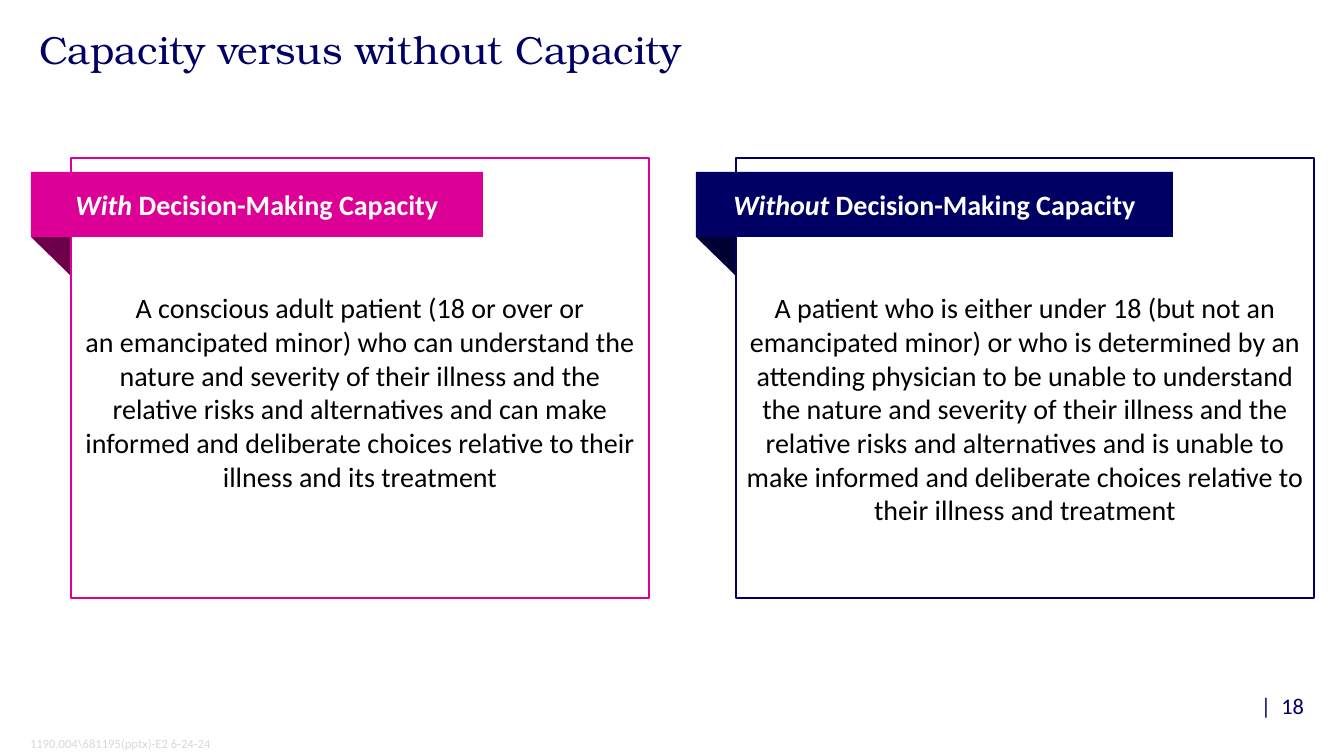
from dataclasses import dataclass

from pptx import Presentation
from pptx.dml.color import RGBColor
from pptx.enum.shapes import MSO_SHAPE
from pptx.enum.text import MSO_ANCHOR, MSO_AUTO_SIZE, PP_ALIGN
from pptx.util import Pt

RECTANGLE = MSO_SHAPE.RECTANGLE
TOP, MIDDLE = MSO_ANCHOR.TOP, MSO_ANCHOR.MIDDLE
LEFT, CENTER = PP_ALIGN.LEFT, PP_ALIGN.CENTER
NO_FIT = MSO_AUTO_SIZE.NONE

# A tilde in the card text stands for a no-break space.
NO_BREAK_SPACE = chr(160)
TITLE = "Capacity versus without Capacity"
PAGE_NUMBER = "|  18"
DOCUMENT_ID = "1190.004\\681195(pptx)-E2 6-24-24"
CARDS = [
    {
        "emphasis": "With",
        "heading": " Decision-Making Capacity",
        "body": "A conscious adult patient (18 or over or an~emancipated minor)~who "
                "can~understand the nature and severity of their~illness and the "
                "relative risks and~alternatives and~can~make informed~and deliberate "
                "choices relative to~their illness and its treatment",
        "color": "DC0096",
        "fold_color": "6E004B",
        "ribbon_width": 452,
    },
    {
        "emphasis": "Without",
        "heading": " Decision-Making Capacity",
        "body": "A patient who is either under 18 (but~not an emancipated minor) or who "
                "is determined by an attending~physician to be unable to understand the "
                "nature and severity of their~illness and the relative risks "
                "and~alternatives and~is~unable to make~informed and deliberate choices "
                "relative to their illness~and~treatment",
        "color": "000064",
        "fold_color": "000032",
        "ribbon_width": 477,
    },
]


@dataclass(frozen=True)
class Theme:
    title_font: str = "TeX Gyre Bonum"
    body_font: str = "Calibri"
    navy: str = "000064"
    white: str = "FFFFFF"
    black: str = "000000"
    gray: str = "D9D9D9"
    title_size: int = 28
    body_size: int = 20
    number_size: int = 16
    footer_size: int = 9


THEME = Theme()
SLIDE_WIDTH, SLIDE_HEIGHT = 1344, 756
EMU_PER_PX = 914400 / 100.8
CARD_LEFT, CARD_TOP, CARD_WIDTH, CARD_HEIGHT = 71, 158, 578, 440
CARD_PITCH = 665
BODY_INSET = 133
RIBBON_TOP, RIBBON_HEIGHT = 172, 65
RIBBON_OVERHANG = 40
FOLD_RISE, FOLD_DROP = 28, 39


def px(length):
    return round(length * EMU_PER_PX)


def place(shape, left, top, width, height):
    shape.left, shape.top = px(left), px(top)
    shape.width, shape.height = px(width), px(height)


def set_frame(shape, anchor, insets=(10, 5, 10, 5)):
    frame = shape.text_frame
    frame.word_wrap = True
    frame.auto_size = NO_FIT
    frame.vertical_anchor = anchor
    (frame.margin_left, frame.margin_top,
     frame.margin_right, frame.margin_bottom) = map(px, insets)
    return frame


def write(paragraph, texts, size, color, font=THEME.body_font, align=LEFT):
    paragraph.alignment = align
    for text in texts:
        run = paragraph.add_run()
        run.text = text
        run.font.name = font
        run.font.size = Pt(size)
        run.font.color.rgb = RGBColor.from_string(color)
    return paragraph.runs


def paint(shape, fill, line=None):
    shape.shadow.inherit = False
    shape.fill.solid()
    shape.fill.fore_color.rgb = RGBColor.from_string(fill)
    if line:
        shape.line.color.rgb = RGBColor.from_string(line)
        shape.line.width = Pt(1)
    else:
        shape.line.fill.background()


def add_rectangle(slide, box, fill, line=None):
    shape = slide.shapes.add_shape(RECTANGLE, *map(px, box))
    paint(shape, fill, line)
    return shape


def add_label(slide, box, text, size, color, anchor, insets):
    label = slide.shapes.add_textbox(*map(px, box))
    frame = set_frame(label, anchor, insets)
    write(frame.paragraphs[0], [text], size, color)


def add_title(slide):
    title = slide.shapes.title
    place(title, 29, 26, 1285, 97)
    paragraph = set_frame(title, TOP).paragraphs[0]
    paragraph.line_spacing = 0.9
    write(paragraph, [TITLE], THEME.title_size, THEME.navy, THEME.title_font)


def add_card(slide, card, left):
    """Draw a bordered card with a ribbon that folds behind its left edge."""
    ribbon_left = left - RIBBON_OVERHANG
    ribbon_bottom = RIBBON_TOP + RIBBON_HEIGHT

    builder = slide.shapes.build_freeform(ribbon_left, ribbon_bottom, EMU_PER_PX)
    builder.add_line_segments([(left, ribbon_bottom + FOLD_DROP),
                               (left, ribbon_bottom - FOLD_RISE)])
    paint(builder.convert_to_shape(), card["fold_color"])

    panel = add_rectangle(slide, (left, CARD_TOP, CARD_WIDTH, CARD_HEIGHT),
                          THEME.white, card["color"])
    frame = set_frame(panel, TOP, (10, BODY_INSET, 10, 5))
    write(frame.paragraphs[0], [card["body"].replace("~", NO_BREAK_SPACE)],
          THEME.body_size, THEME.black, align=CENTER)

    ribbon = add_rectangle(
        slide, (ribbon_left, RIBBON_TOP, card["ribbon_width"], RIBBON_HEIGHT),
        card["color"])
    frame = set_frame(ribbon, MIDDLE)
    runs = write(frame.paragraphs[0], [card["emphasis"], card["heading"]],
                 THEME.body_size, THEME.white, align=CENTER)
    for run in runs:
        run.font.bold = True
    runs[0].font.italic = True


def main():
    presentation = Presentation()
    presentation.slide_width = px(SLIDE_WIDTH)
    presentation.slide_height = px(SLIDE_HEIGHT)
    slide = presentation.slides.add_slide(presentation.slide_layouts[5])
    add_title(slide)
    add_label(slide, (1261, 682, 66, 48), PAGE_NUMBER, THEME.number_size,
              THEME.navy, MIDDLE, (0, 5, 0, 5))
    add_label(slide, (30, 731, 320, 25), DOCUMENT_ID, THEME.footer_size,
              THEME.gray, TOP, (0, 5, 10, 5))
    for index, card in enumerate(CARDS):
        add_card(slide, card, CARD_LEFT + index * CARD_PITCH)
    presentation.save("out.pptx")


if __name__ == "__main__":
    main()
